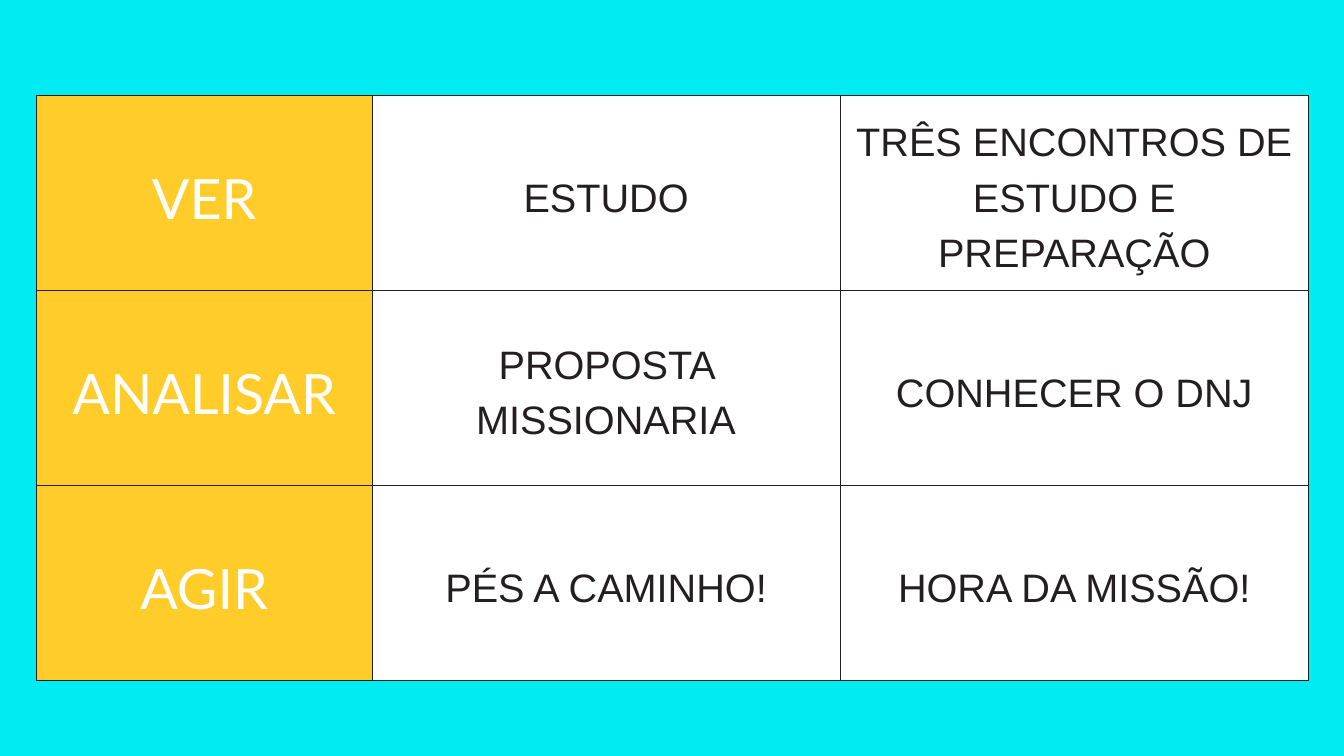
from lxml.etree import SubElement
from pptx import Presentation
from pptx.dml.color import RGBColor
from pptx.enum.text import MSO_ANCHOR as Anchor, PP_ALIGN as Align
from pptx.oxml.ns import qn
from pptx.util import Inches, Pt

WIDE, HIGH = 20, 11.25
INK = "231F20"
HEAD = {"size": 59.5, "font": "Lato", "ink": "FFFFFF", "fill": "FFCC29"}
BODY = {"size": 42.5, "font": "Arial", "ink": INK, "fill": "FFFFFF"}
STEPS = [
    ("VER", "ESTUDO", "TRÊS ENCONTROS DE ESTUDO E PREPARAÇÃO"),
    ("ANALISAR", "PROPOSTA MISSIONARIA", "CONHECER O DNJ"),
    ("AGIR", "PÉS A CAMINHO!", "HORA DA MISSÃO!"),
]


def paint(fill, tone):
    fill.solid()
    fill.fore_color.rgb = RGBColor.from_string(tone)


def frame(cell):
    props = cell._tc.get_or_add_tcPr()
    for spot, side in enumerate(("lnL", "lnR", "lnT", "lnB")):
        line = SubElement(props, qn(f"a:{side}"), w=str(Pt(1.43)))
        solid = SubElement(line, qn("a:solidFill"))
        SubElement(solid, qn("a:srgbClr"), val=INK)
        props.insert(spot, line)


def write(cell, text, look):
    cell.text = text
    cell.vertical_anchor = Anchor.MIDDLE
    for side in ("left", "right", "top", "bottom"):
        setattr(cell, f"margin_{side}", Inches(0.12))
    para = cell.text_frame.paragraphs[0]
    para.alignment = Align.CENTER
    para.line_spacing = Pt(look["size"] * 1.4)
    font = para.runs[0].font
    for name, value in {"size": Pt(look["size"]), "name": look["font"], "bold": False}.items():
        setattr(font, name, value)
    paint(font.fill, look["ink"])
    paint(cell.fill, look["fill"])
    frame(cell)


def add_steps(slide, left, top, width, height):
    box = [Inches(side) for side in (left, top, width, height)]
    table = slide.shapes.add_table(len(STEPS), len(STEPS[0]), *box).table
    for col, share in zip(table.columns, (0.264, 0.368, 0.368)):
        col.width = Inches(width * share)
    for row, texts in zip(table.rows, STEPS):
        row.height = Inches(height / len(STEPS))
        for cell, text, look in zip(row.cells, texts, (HEAD, BODY, BODY)):
            write(cell, text, look)


def main():
    deck = Presentation()
    deck.slide_width, deck.slide_height = Inches(WIDE), Inches(HIGH)
    slide = deck.slides.add_slide(deck.slide_layouts[6])
    paint(slide.background.fill, "00ECF2")
    add_steps(slide, WIDE * 0.027, HIGH * 0.126, WIDE * 0.9465, HIGH * 0.774)
    deck.save("out.pptx")


if __name__ == "__main__":
    main()
